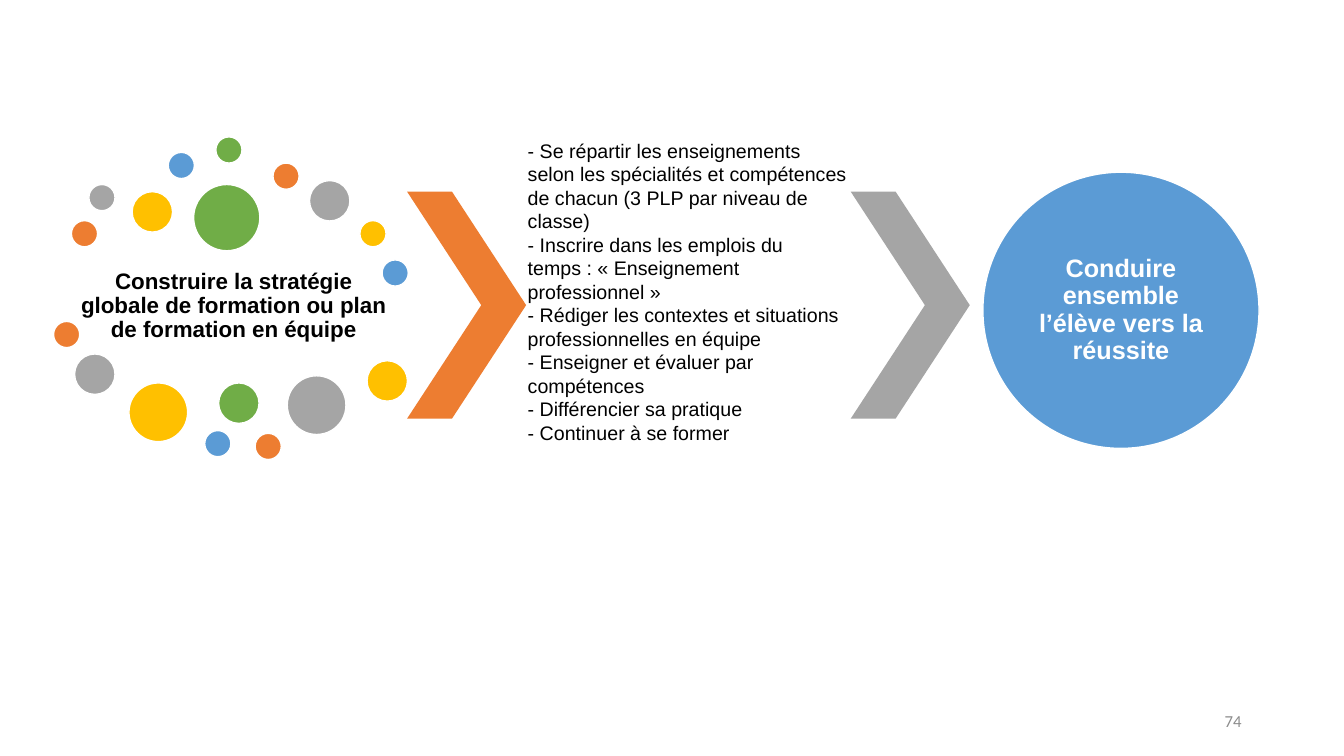
"""Build the slide on the team training strategy leading to student success."""
from itertools import cycle

from pptx import Presentation
from pptx.dml.color import RGBColor
from pptx.enum.shapes import MSO_SHAPE
from pptx.enum.text import MSO_ANCHOR, PP_ALIGN
from pptx.util import Cm, Pt

ORANGE = RGBColor(0xED, 0x7D, 0x31)
GREY = RGBColor(0xA5, 0xA5, 0xA5)
YELLOW = RGBColor(0xFF, 0xC0, 0x00)
BLUE = RGBColor(0x5B, 0x9B, 0xD5)
GREEN = RGBColor(0x70, 0xAD, 0x47)
WHITE = RGBColor(0xFF, 0xFF, 0xFF)
BLACK = RGBColor(0x00, 0x00, 0x00)
NUMBER_GREY = RGBColor(0x8C, 0x8C, 0x8C)

STRATEGY = "Construire la stratégie globale de formation ou plan de formation en équipe"
ACTIONS = [
    "Se répartir les enseignements selon les spécialités et compétences de chacun (3 PLP par niveau de classe)",
    "Inscrire dans les emplois du temps : «\u00a0Enseignement professionnel\u00a0»",
    "Rédiger les contextes et situations professionnelles en équipe",
    "Enseigner et évaluer par compétences",
    "Différencier sa pratique",
    "Continuer à se former",
]
GOAL = "Conduire ensemble l’élève vers la réussite"
PAGE_NUMBER = "74"

SMALL, MEDIUM, LARGE, HUGE = 0.66, 1.02, 1.48, 1.67
DOT_COLORS = [ORANGE, GREY, YELLOW, BLUE, GREEN]
DOTS = [
    (1.8, 5.56, SMALL), (2.24, 4.65, SMALL), (3.33, 4.83, MEDIUM),
    (4.24, 3.84, SMALL), (5.44, 3.45, SMALL), (6.88, 4.11, SMALL),
    (7.8, 4.55, MEDIUM), (9.07, 5.56, SMALL), (9.63, 6.55, SMALL),
    (4.88, 4.65, HUGE), (1.35, 8.1, SMALL), (1.88, 8.92, MEDIUM),
    (3.25, 9.65, LARGE), (5.16, 10.85, SMALL), (5.51, 9.65, MEDIUM),
    (6.43, 10.92, SMALL), (7.24, 9.47, LARGE), (9.25, 9.09, MEDIUM),
]
CHEVRONS = [(10.26, ORANGE), (21.44, GREY)]


def add_filled(s, kind, x, y, w, h, color):
    sp = s.shapes.add_shape(kind, Cm(x), Cm(y), Cm(w), Cm(h))
    sp.shadow.inherit = False
    sp.fill.solid()
    sp.fill.fore_color.rgb = color
    sp.line.fill.background()
    return sp


def add_circle(s, x, y, size, color):
    sp = add_filled(s, MSO_SHAPE.OVAL, x, y, size, size, color)
    sp.line.color.rgb = WHITE
    sp.line.width = Pt(1)
    return sp


def write(sp, text, size, color, align, anchor, margin=0.04, font="Arial",
          bold=False, spacing=None):
    tf = sp.text_frame
    tf.word_wrap = True
    tf.vertical_anchor = anchor
    tf.margin_left = tf.margin_right = tf.margin_top = tf.margin_bottom = Cm(margin)
    p = tf.paragraphs[0]
    p.text = text
    p.alignment = align
    p.line_spacing = spacing
    for r in p.runs:
        r.font.name = font
        r.font.size = Pt(size)
        r.font.bold = bold
        r.font.color.rgb = color


def add_text(s, x, y, w, h, *args, **kwargs):
    write(s.shapes.add_textbox(Cm(x), Cm(y), Cm(w), Cm(h)), *args, **kwargs)


def main():
    prs = Presentation()
    prs.slide_width, prs.slide_height = Cm(33.87), Cm(19.05)
    s = prs.slides.add_slide(prs.slide_layouts[6])

    add_text(s, 1.8, 6.38, 8.18, 2.69, STRATEGY, 16, BLACK,
             PP_ALIGN.CENTER, MSO_ANCHOR.MIDDLE, bold=True, spacing=0.9)
    for (x, y, size), color in zip(DOTS, cycle(DOT_COLORS)):
        add_circle(s, x, y, size, color)

    for x, color in CHEVRONS:
        sp = add_filled(s, MSO_SHAPE.CHEVRON, x, 4.83, 3, 5.72, color)
        sp.adjustments[0] = 0.623

    add_text(s, 13.26, 3.45, 8.18, 12.12, "\v".join(f"- {a}" for a in ACTIONS),
             14, BLACK, PP_ALIGN.LEFT, MSO_ANCHOR.TOP)

    goal = add_circle(s, 24.77, 4.34, 6.96, BLUE)
    write(goal, GOAL, 18, WHITE, PP_ALIGN.CENTER, MSO_ANCHOR.MIDDLE,
          margin=0, bold=True, spacing=0.9)

    add_text(s, 23.92, 17.65, 7.62, 1.02, PAGE_NUMBER, 12, NUMBER_GREY,
             PP_ALIGN.RIGHT, MSO_ANCHOR.MIDDLE, margin=0.25, font="Calibri")
    prs.save("out.pptx")


if __name__ == "__main__":
    main()
